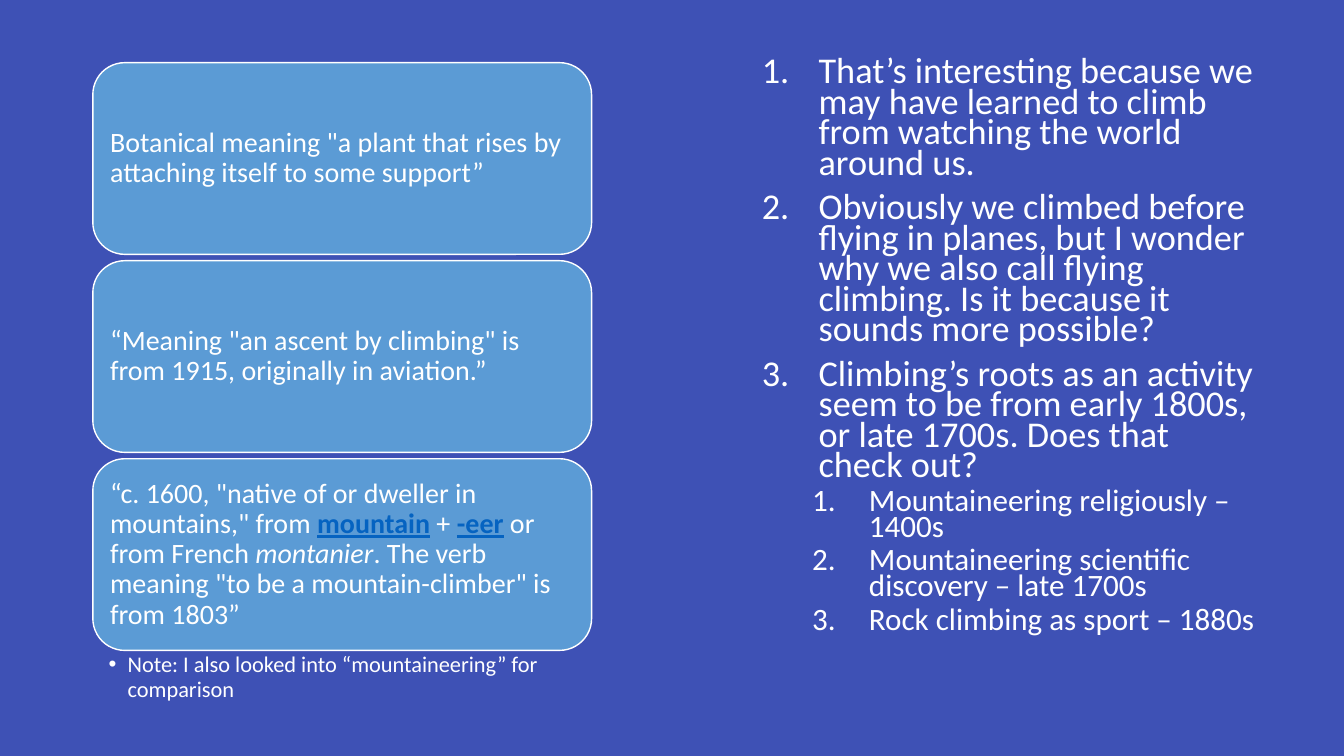
from dataclasses import dataclass

from lxml.etree import SubElement
from pptx import Presentation
from pptx.dml.color import RGBColor as Color
from pptx.enum.shapes import MSO_SHAPE as Shape
from pptx.enum.text import MSO_ANCHOR as Anchor, PP_ALIGN as Align
from pptx.oxml.ns import qn
from pptx.util import Cm, Pt


@dataclass(frozen=True)
class Theme:
    font: str = "Calibri"
    background: Color = Color(0x3E, 0x51, 0xB5)
    card: Color = Color(0x5B, 0x9B, 0xD5)
    text: Color = Color(0xFF, 0xFF, 0xFF)
    term: Color = Color(0x05, 0x63, 0xC1)
    card_size: float = 20
    note_size: float = 16
    comment_size: float = 25.9
    detail_size: float = 22.2


THEME = Theme()

CARD_LEFT, CARD_TOP = 2.34, 1.58
CARD_WIDTH, CARD_HEIGHT, CARD_STEP = 12.57, 4.83, 4.99

MEANINGS = [
    [("Botanical meaning \"a plant that rises by attaching itself to some support”", "plain")],
    [("“Meaning \"an ascent by climbing\" is from 1915, originally in aviation.”", "plain")],
    [
        ("“c. 1600, \"native of or dweller in mountains,\" from ", "plain"),
        ("mountain", "term"),
        (" + ", "plain"),
        ("-eer", "term"),
        (" or from French ", "plain"),
        ("montanier", "foreign"),
        (". The verb meaning \"to be a mountain-climber\" is from 1803”", "plain"),
    ],
]

NOTE = "Note: I also looked into “mountaineering” for comparison"

COMMENTS = [
    (0, "That’s interesting because we may have learned to climb from watching the world around us."),
    (0, "Obviously we climbed before flying in planes, but I wonder why we also call flying climbing. "
        "Is it because it sounds more possible?"),
    (0, "Climbing’s roots as an activity seem to be from early 1800s, or late 1700s. Does that check out?"),
    (1, "Mountaineering religiously – 1400s"),
    (1, "Mountaineering scientific discovery – late 1700s"),
    (1, "Rock climbing as sport – 1880s"),
]


def add_span(para, words, size, style="plain"):
    span = para.add_run()
    span.text = words
    font = span.font
    font.name = THEME.font
    font.size = Pt(size)
    font.color.rgb = THEME.term if style == "term" else THEME.text
    if style == "term":
        font.bold = font.underline = True
    if style == "foreign":
        font.italic = True


def set_frame(frame, side, edge, anchor=Anchor.TOP):
    frame.word_wrap = True
    frame.vertical_anchor = anchor
    frame.margin_left = frame.margin_right = Cm(side)
    frame.margin_top = frame.margin_bottom = Cm(edge)


def set_space(para, lines, before=0):
    para.alignment = Align.LEFT
    para.line_spacing = lines
    para.space_before = Pt(before)
    para.space_after = Pt(0)


def set_marker(para, margin, hang, tag, **attributes):
    properties = para._p.get_or_add_pPr()
    properties.set("marL", str(Cm(margin)))
    properties.set("indent", str(-Cm(hang)))
    SubElement(properties, qn("a:buFont"), typeface="Arial")
    SubElement(properties, qn(tag), **attributes)


def add_card(page, top, spans):
    card = page.shapes.add_shape(
        Shape.ROUNDED_RECTANGLE, Cm(CARD_LEFT), Cm(top), Cm(CARD_WIDTH), Cm(CARD_HEIGHT))
    card.shadow.inherit = False
    card.fill.solid()
    card.fill.fore_color.rgb = THEME.card
    card.line.color.rgb = THEME.text
    card.line.width = Pt(1)
    set_frame(card.text_frame, 0.2, 0.2, Anchor.MIDDLE)
    para = card.text_frame.paragraphs[0]
    set_space(para, 0.9)
    for words, style in spans:
        add_span(para, words, THEME.card_size, style)


def add_note(page, top):
    box = page.shapes.add_textbox(Cm(CARD_LEFT), Cm(top), Cm(CARD_WIDTH), Cm(1.4))
    set_frame(box.text_frame, 0.4, 0.08)
    para = box.text_frame.paragraphs[0]
    set_space(para, 0.9)
    set_marker(para, 0.48, 0.48, "a:buChar", char="•")
    add_span(para, NOTE, THEME.note_size)


def add_comments(page):
    box = page.shapes.add_textbox(Cm(18.95), Cm(1.37), Cm(12.98), Cm(15.77))
    frame = box.text_frame
    set_frame(frame, 0.25, 0.13)
    for index, (level, words) in enumerate(COMMENTS):
        para = frame.add_paragraph() if index else frame.paragraphs[0]
        para.level = level
        set_space(para, 0.7, before=5 if level else 10)
        set_marker(para, 1.43 + 1.27 * level, 1.43, "a:buAutoNum", type="arabicPeriod")
        add_span(para, words, THEME.detail_size if level else THEME.comment_size)


def main():
    deck = Presentation()
    deck.slide_width, deck.slide_height = Cm(33.87), Cm(19.05)
    page = deck.slides.add_slide(deck.slide_layouts[6])
    page.background.fill.solid()
    page.background.fill.fore_color.rgb = THEME.background
    for index, spans in enumerate(MEANINGS):
        add_card(page, CARD_TOP + index * CARD_STEP, spans)
    add_note(page, CARD_TOP + 2 * CARD_STEP + CARD_HEIGHT)
    add_comments(page)
    deck.save("out.pptx")


if __name__ == "__main__":
    main()
